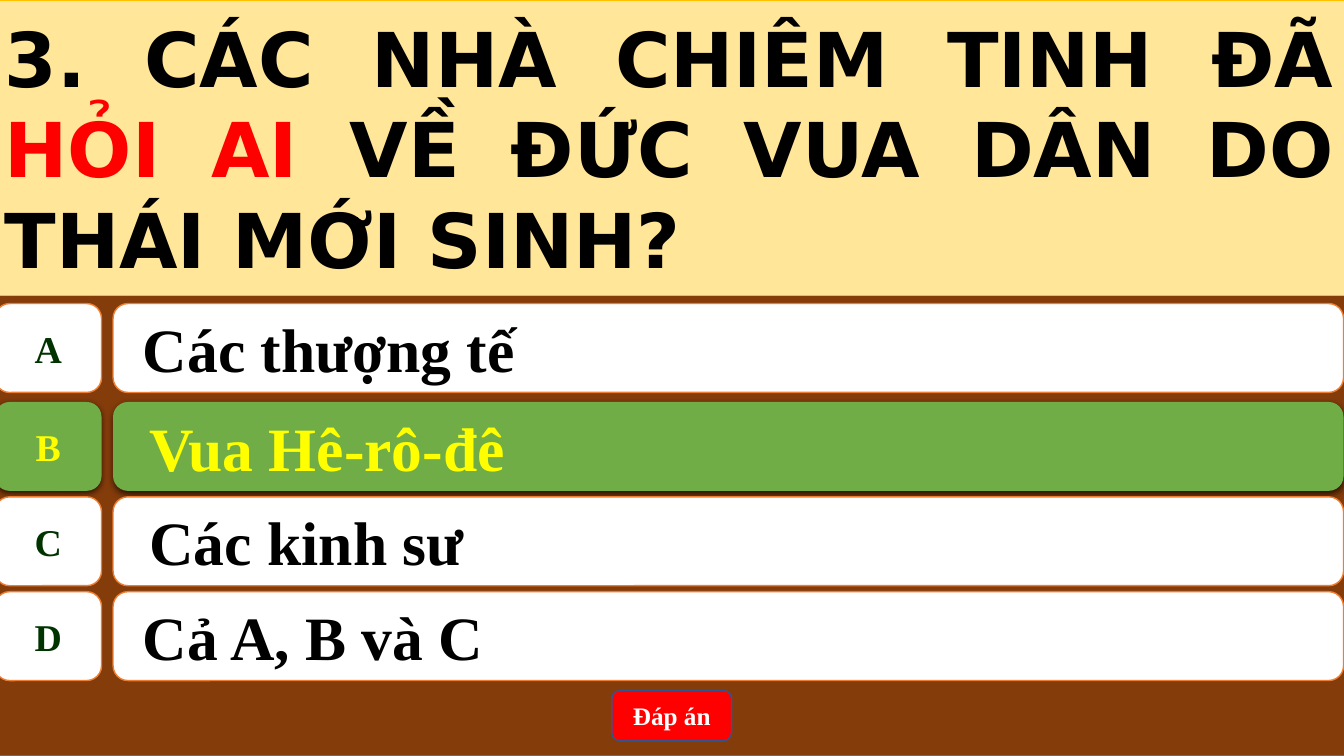
from dataclasses import dataclass

from lxml import etree
from pptx import Presentation
from pptx.dml.color import RGBColor
from pptx.enum.shapes import MSO_SHAPE
from pptx.enum.text import MSO_ANCHOR, PP_ALIGN
from pptx.oxml.ns import qn
from pptx.util import Cm, Pt

RECT = MSO_SHAPE.RECTANGLE
ROUNDED = MSO_SHAPE.ROUNDED_RECTANGLE
BADGE = MSO_SHAPE.FLOWCHART_ALTERNATE_PROCESS
MIDDLE = MSO_ANCHOR.MIDDLE
LEFT, CENTER, JUSTIFY = PP_ALIGN.LEFT, PP_ALIGN.CENTER, PP_ALIGN.JUSTIFY


@dataclass(frozen=True)
class Theme:
    """Colours, fonts and type sizes of the quiz."""
    brown: str = "843C0B"
    blue: str = "43739E"
    cream: str = "FFE699"
    gold: str = "FFC000"
    white: str = "FFFFFF"
    orange: str = "ED7D31"
    green: str = "70AD47"
    dark_green: str = "003300"
    yellow: str = "FFFF00"
    red: str = "FF0000"
    navy: str = "325491"
    black: str = "000000"
    serif: str = "Times New Roman"
    sans: str = "DejaVu Sans"
    question: int = 54
    answer: int = 44
    letter: int = 27
    button: int = 18


def write(p, text, *, font, size, color, align=LEFT):
    """Add a bold run to a paragraph."""
    p.alignment = align
    r = p.add_run()
    r.text = text
    r.font.name = font
    r.font.size = Pt(size)
    r.font.bold = True
    r.font.color.rgb = RGBColor.from_string(color)


class QuizSlide:
    """Draws the parts of a quiz question on one slide."""

    def __init__(self, slide, theme):
        self.s = slide
        self.theme = theme

    def box(self, kind, x, y, w, h, fill, line=None, width=1.0):
        """Add a filled shape without shadow."""
        sp = self.s.shapes.add_shape(kind, Cm(x), Cm(y), Cm(w), Cm(h))
        sp.shadow.inherit = False
        sp.fill.solid()
        sp.fill.fore_color.rgb = RGBColor.from_string(fill)
        if line:
            sp.line.color.rgb = RGBColor.from_string(line)
            sp.line.width = Pt(width)
        else:
            sp.line.fill.background()
        sp.text_frame.vertical_anchor = MIDDLE
        return sp

    def drop_shadow(self, sp):
        """Give a shape a soft shadow below it."""
        effects = sp._element.spPr.find(qn("a:effectLst"))
        shadow = etree.SubElement(
            effects, qn("a:outerShdw"), blurRad=str(Pt(4.5)), dist=str(Pt(1.5)),
            dir="5400000", algn="ctr", rotWithShape="0")
        color = etree.SubElement(shadow, qn("a:srgbClr"), val=self.theme.black)
        etree.SubElement(color, qn("a:alpha"), val="63000")

    def question(self, parts):
        """Add the question banner from (text, colour) parts."""
        t = self.theme
        sp = self.box(RECT, -0.13, 0, 34.01, 7.44, t.cream, t.gold, 0.5)
        for text, color in parts:
            write(sp.text_frame.paragraphs[0], text, font=t.sans,
                  size=t.question, color=color, align=JUSTIFY)

    def answer(self, letter, text, y, margin, indent, correct):
        """Add a lettered answer row, highlighted when correct."""
        t = self.theme
        fill, line = (t.green, None) if correct else (t.white, t.orange)
        badge = self.box(BADGE, -0.13, y, 2.69, 2.24, fill, line)
        badge.text_frame.word_wrap = False
        write(badge.text_frame.paragraphs[0], letter, font=t.serif, size=t.letter,
              color=t.yellow if correct else t.dark_green, align=CENTER)
        bar = self.box(ROUNDED, 2.85, y, 31.01, 2.24, fill, line)
        p = bar.text_frame.paragraphs[0]
        write(p, text, font=t.serif, size=t.answer,
              color=t.yellow if correct else t.black)
        pPr = p._p.get_or_add_pPr()
        pPr.set("marL", str(Cm(margin)))
        pPr.set("indent", str(Cm(indent)))
        if correct:
            self.drop_shadow(badge)
            self.drop_shadow(bar)

    def button(self, text):
        """Add the button below the answers."""
        t = self.theme
        sp = self.box(ROUNDED, 15.42, 17.4, 3.02, 1.27, t.red, t.navy)
        write(sp.text_frame.paragraphs[0], text, font=t.serif, size=t.button,
              color=t.white, align=CENTER)


def main():
    """Build and save the quiz slide."""
    prs = Presentation()
    prs.slide_width, prs.slide_height = Cm(33.87), Cm(19.05)
    theme = Theme()
    quiz = QuizSlide(prs.slides.add_slide(prs.slide_layouts[6]), theme)
    quiz.box(RECT, -0.13, 0, 34.01, 19.05, theme.brown, theme.blue)
    quiz.question([
        ("3. CÁC NHÀ CHIÊM TINH ĐÃ ", theme.black),
        ("HỎI AI ", theme.red),
        ("VỀ ĐỨC VUA DÂN DO THÁI MỚI SINH?", theme.black),
    ])
    plain, hanging = (0.39, 0), (1.27, -0.71)
    answers = [
        ("A", "Các thượng tế", 7.65, plain),
        ("B", "Vua Hê-rô-đê", 10.13, hanging),
        ("C", "Các kinh sư", 12.52, hanging),
        ("D", "Cả A, B và C", 14.91, plain),
    ]
    for letter, text, y, (margin, indent) in answers:
        quiz.answer(letter, text, y, margin, indent, correct=letter == "B")
    quiz.button("Đáp án")
    prs.save("out.pptx")


if __name__ == "__main__":
    main()
